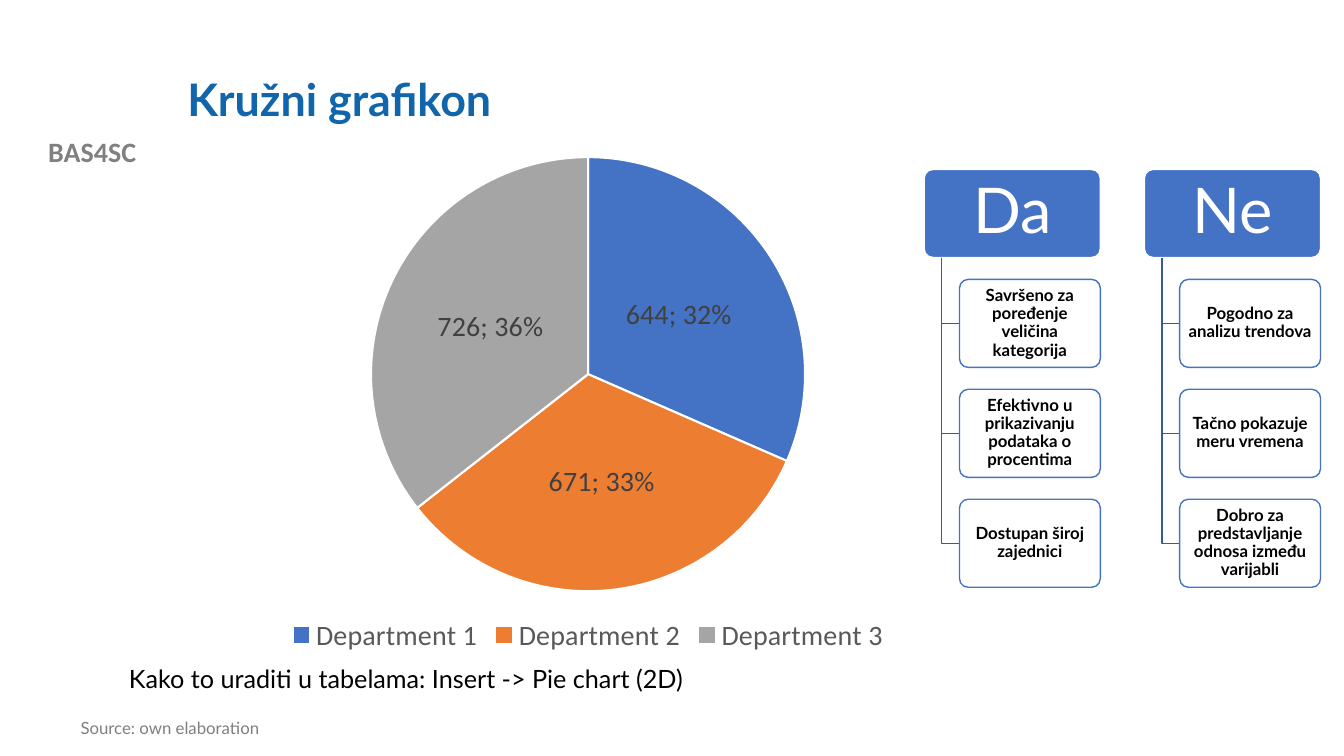
from dataclasses import dataclass

from lxml.etree import SubElement
from pptx import Presentation
from pptx.chart.data import CategoryChartData
from pptx.dml.color import RGBColor
from pptx.enum.chart import XL_CHART_TYPE, XL_LABEL_POSITION, XL_LEGEND_POSITION
from pptx.enum.shapes import MSO_SHAPE
from pptx.enum.text import MSO_ANCHOR, MSO_AUTO_SIZE, PP_ALIGN
from pptx.oxml.ns import qn
from pptx.util import Cm, Pt

TITLE = "Kružni grafikon"
PROJECT = "BAS4SC"
SOURCE = "Source: own elaboration"
HOW_TO = "Kako to uraditi u tabelama: Insert -> Pie chart (2D)"
DEPARTMENTS = {"Department 1": 644, "Department 2": 671, "Department 3": 726}
VERDICTS = {
    "Da": [
        "Savršeno za poređenje veličina kategorija",
        "Efektivno u prikazivanju podataka o procentima",
        "Dostupan široj zajednici",
    ],
    "Ne": [
        "Pogodno za analizu trendova",
        "Tačno pokazuje meru vremena",
        "Dobro za predstavljanje odnosa između varijabli",
    ],
}


@dataclass(frozen=True)
class Theme:
    heading: str = "1065AB"
    project: str = "808080"
    source: str = "7F7F7F"
    text: str = "000000"
    white: str = "FFFFFF"
    accent: str = "4472C4"
    branch: str = "365B9D"
    legend: str = "595959"
    label: str = "404040"
    slices: tuple = ("4472C4", "ED7D31", "A5A5A5")
    sans: str = "Lato"
    chart_font: str = "Calibri"
    title_size: int = 32
    header_size: int = 45
    chart_size: int = 20
    note_size: int = 18
    small_size: int = 12


THEME = Theme()

# Lengths in centimetres
TREE_LEFT, TREE_TOP = 23.29, 4.27
COLUMN_PITCH, ROW_PITCH = 5.55, 2.77
HEADER_WIDTH, CARD_WIDTH, BOX_HEIGHT = 4.44, 3.55, 2.22
TRUNK_INDENT, CARD_INDENT = 0.44, 0.89


def color(value):
    return RGBColor.from_string(value)


def style_font(font, size, ink, name=THEME.sans, bold=False):
    for attribute, value in {"size": Pt(size), "name": name, "bold": bold}.items():
        setattr(font, attribute, value)
    font.color.rgb = color(ink)


def write(shape, text, size, ink, name=THEME.sans, bold=False,
          align=PP_ALIGN.LEFT, spacing=None, anchor=MSO_ANCHOR.TOP, insets=(0.25, 0.13)):
    """Fill a shape with one formatted paragraph; insets are (side, top and bottom)."""
    frame = shape.text_frame
    side, upright = (Cm(inset) for inset in insets)
    settings = {"word_wrap": True, "auto_size": MSO_AUTO_SIZE.NONE, "vertical_anchor": anchor,
                "margin_left": side, "margin_right": side,
                "margin_top": upright, "margin_bottom": upright}
    for attribute, value in settings.items():
        setattr(frame, attribute, value)
    para = frame.paragraphs[0]
    for attribute, value in {"alignment": align, "line_spacing": spacing,
                             "space_before": Pt(0)}.items():
        setattr(para, attribute, value)
    span = para.add_run()
    span.text = text
    style_font(span.font, size, ink, name, bold)
    return para


def place(shape, left, top, width, height):
    for attribute, value in {"left": left, "top": top, "width": width, "height": height}.items():
        setattr(shape, attribute, Cm(value))


def add_text(page, left, top, width, height, *content, **formats):
    box = page.shapes.add_textbox(Cm(left), Cm(top), Cm(width), Cm(height))
    write(box, *content, **formats)


def add_box(page, left, top, width, fill, line):
    box = page.shapes.add_shape(MSO_SHAPE.ROUNDED_RECTANGLE,
                                Cm(left), Cm(top), Cm(width), Cm(BOX_HEIGHT))
    box.adjustments[0] = 0.1
    box.shadow.inherit = False
    box.fill.solid()
    box.fill.fore_color.rgb = color(fill)
    box.line.color.rgb = color(line)
    box.line.width = Pt(1)
    return box


def add_branch(page, trunk, top, card_left, middle):
    builder = page.shapes.build_freeform(Cm(trunk), Cm(top))
    builder.add_line_segments([(Cm(trunk), Cm(middle)), (Cm(card_left), Cm(middle))], close=False)
    branch = builder.convert_to_shape()
    branch.shadow.inherit = False
    branch.fill.background()
    branch.line.color.rgb = color(THEME.branch)
    branch.line.width = Pt(1)


def add_column(page, left, header, reasons):
    box = add_box(page, left, TREE_TOP, HEADER_WIDTH, THEME.accent, THEME.white)
    centred = {"align": PP_ALIGN.CENTER, "spacing": 0.9, "anchor": MSO_ANCHOR.MIDDLE}
    write(box, header, THEME.header_size, THEME.white, insets=(0.23, 0.15), **centred)
    card_left = left + CARD_INDENT
    for row, reason in enumerate(reasons, start=1):
        top = TREE_TOP + row * ROW_PITCH
        add_branch(page, left + TRUNK_INDENT, TREE_TOP + BOX_HEIGHT,
                   card_left, top + BOX_HEIGHT / 2)
        card = add_box(page, card_left, top, CARD_WIDTH, THEME.white, THEME.accent)
        tint = card.fill._xPr.find(qn("a:solidFill"))[0]
        SubElement(tint, qn("a:alpha"), val="90000")
        write(card, reason, THEME.small_size, THEME.text, bold=True, insets=(0.08, 0.05), **centred)


def add_pie(page):
    values = CategoryChartData()
    values.categories = list(DEPARTMENTS)
    values.add_series("Series 1", list(DEPARTMENTS.values()))
    chart = page.shapes.add_chart(XL_CHART_TYPE.PIE, Cm(4.47), Cm(3.61),
                                  Cm(20.7), Cm(12.98), values).chart
    style_font(chart.font, THEME.chart_size, THEME.text, THEME.chart_font)
    chart.has_title = False
    chart.has_legend = True
    chart.legend.position = XL_LEGEND_POSITION.BOTTOM
    chart.legend.include_in_layout = False
    style_font(chart.legend.font, THEME.chart_size, THEME.legend, THEME.chart_font)
    plot = chart.plots[0]
    plot.vary_by_categories = True
    for index, fill in enumerate(THEME.slices):
        pie_slice = plot.series[0].points[index].format
        pie_slice.fill.solid()
        pie_slice.fill.fore_color.rgb = color(fill)
        pie_slice.line.color.rgb = color(THEME.white)
        pie_slice.line.width = Pt(1.5)
    labels = plot.series[0].data_labels
    for attribute, value in {"show_value": True, "show_percentage": True,
                             "position": XL_LABEL_POSITION.CENTER}.items():
        setattr(labels, attribute, value)
    style_font(labels.font, THEME.chart_size, THEME.label, THEME.chart_font)


def main():
    deck = Presentation()
    deck.slide_width, deck.slide_height = Cm(33.87), Cm(19.05)
    page = deck.slides.add_slide(deck.slide_layouts[1])

    add_text(page, 0, 3.25, 4.65, 1.12, PROJECT, THEME.chart_size, THEME.project,
             name=THEME.chart_font, bold=True, align=PP_ALIGN.CENTER)
    title, source = page.placeholders
    place(title, 4.47, 1.02, 27.08, 3.1)
    write(title, TITLE, THEME.title_size, THEME.heading, bold=True,
          spacing=0.9, anchor=MSO_ANCHOR.MIDDLE)
    place(source, 1.78, 18.01, 12.73, 0.81)
    para = write(source, SOURCE, THEME.small_size, THEME.source, spacing=0.9)
    properties = para._p.get_or_add_pPr()
    properties.set("marL", "0")
    properties.set("indent", "0")
    SubElement(properties, qn("a:buNone"))

    add_pie(page)
    for column, (header, reasons) in enumerate(VERDICTS.items()):
        add_column(page, TREE_LEFT + column * COLUMN_PITCH, header, reasons)
    add_text(page, 3.0, 16.59, 20.02, 1.07, HOW_TO, THEME.note_size, THEME.text)
    deck.save("out.pptx")


if __name__ == "__main__":
    main()
